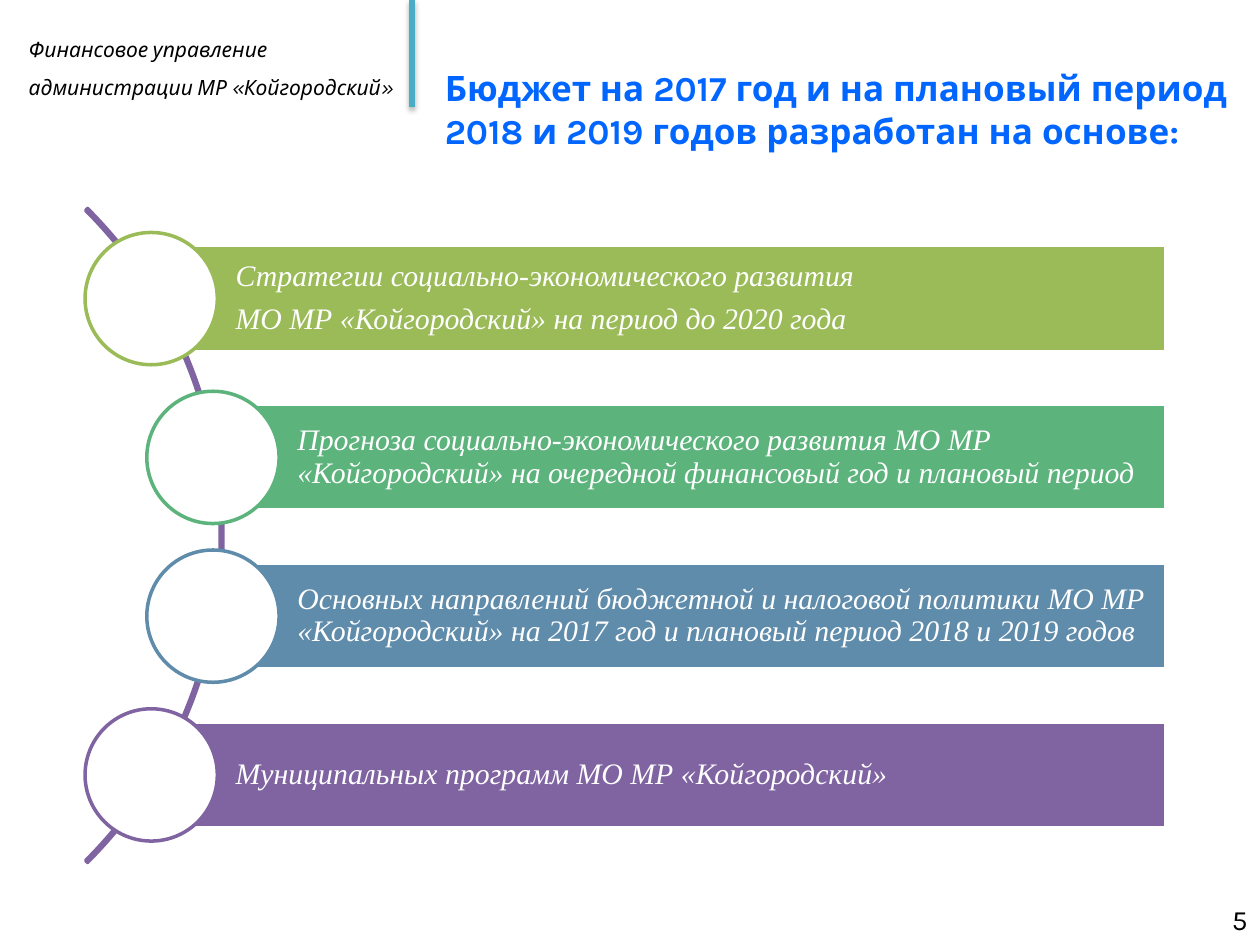
import pptx
import pptx.util
import pptx.dml.color
import pptx.enum.shapes
import pptx.enum.text
import pptx.oxml

Inches, Pt = pptx.util.Inches, pptx.util.Pt
Kind = pptx.enum.shapes.MSO_SHAPE
Align = pptx.enum.text.PP_ALIGN
Anchor = pptx.enum.text.MSO_ANCHOR

HEAD = ["Финансовое управление", "администрации МР «Койгородский»"]
TITLE = ["Бюджет на 2017 год и на плановый период 2018 и 2019 годов разработан на основе:"]
PAGE = ["5"]
BASES = [
    ("9BBB59", 1.2, ["Стратегии социально-экономического развития",
                     "МО МР «Койгородский» на период до 2020 года"]),
    ("5CB37C", 1.69, ["Прогноза социально-экономического развития МО МР "
                      "«Койгородский» на очередной финансовый год и плановый период"]),
    ("608CAB", 1.69, ["Основных направлений бюджетной и налоговой политики МО МР "
                      "«Койгородский» на 2017 год и плановый период 2018 и 2019 годов"]),
    ("8064A2", 1.2, ["Муниципальных программ МО МР «Койгородский»"]),
]
RIGHT, FIRST, STEP = 9.25, 2.37, 1.26
BAR, DISC = 0.84, 1.05
SHADOW = (
    '<a:effectLst xmlns:a="http://schemas.openxmlformats.org/drawingml/2006/main">'
    '<a:outerShdw blurRad="40000" dist="23000" dir="5400000" rotWithShape="0">'
    '<a:srgbClr val="000000"><a:alpha val="35000"/></a:srgbClr>'
    '</a:outerShdw></a:effectLst>'
)


def paint(part, color):
    part.solid()
    part.fore_color.rgb = pptx.dml.color.RGBColor.from_string(color)


def write(shape, lines, size, color, face="Karla", bold=False, italic=False,
          align=Align.LEFT, anchor=Anchor.MIDDLE, space=None, after=None,
          inset=(0.1, 0.05, 0.1, 0.05)):
    frame = shape.text_frame
    frame.word_wrap = True
    frame.vertical_anchor = anchor
    (frame.margin_left, frame.margin_top,
     frame.margin_right, frame.margin_bottom) = map(Inches, inset)
    for i, line in enumerate(lines):
        para = frame.add_paragraph() if i else frame.paragraphs[0]
        para.alignment = align
        para.line_spacing = space
        para.space_after = after
        run = para.add_run()
        run.text = line
        font = run.font
        font.name, font.size, font.bold, font.italic = face, Pt(size), bold, italic
        paint(font.fill, color)


def draw(slide, kind, box, line, fill=None):
    shape = slide.shapes.add_shape(kind, *map(Inches, box))
    shape.shadow.inherit = False
    if fill:
        paint(shape.fill, fill)
    else:
        shape.fill.background()
    paint(shape.line.fill, line)
    shape.line.width = Pt(2)
    return shape


def text_box(slide, box):
    return slide.shapes.add_textbox(*map(Inches, box))


def main():
    deck = pptx.Presentation()
    deck.slide_width, deck.slide_height = Inches(10), Inches(7.5)
    slide = deck.slides.add_slide(deck.slide_layouts[5])

    head = text_box(slide, (0.13, 0.14, 3.14, 0.71))
    write(head, HEAD, 12, "000000", italic=True, space=1.5, anchor=Anchor.TOP)
    rule = slide.shapes.add_connector(
        pptx.enum.shapes.MSO_CONNECTOR.STRAIGHT,
        Inches(3.27), Inches(0), Inches(3.27), Inches(0.85))
    paint(rule.line.fill, "4BACC6")
    rule.line.width = Pt(3)
    rule._element.spPr.append(pptx.oxml.parse_xml(SHADOW))

    title = slide.shapes.title
    title.left, title.top, title.width, title.height = map(
        Inches, (3.43, 0.29, 6.57, 1.15))
    write(title, TITLE, 20, "0066FF", bold=True)
    page = text_box(slide, (7.67, 7.1, 2.33, 0.4))
    write(page, PAGE, 16, "000000", align=Align.RIGHT)

    arc = draw(slide, Kind.BLOCK_ARC, (-5.57, 0.58, 7.34, 7.34), "8064A2")
    for i, value in enumerate((189, 27, 0.003)):
        arc.adjustments[i] = value

    for i, (color, left, lines) in enumerate(BASES):
        mid = FIRST + i * STEP
        bar = draw(slide, Kind.RECTANGLE,
                   (left, mid - BAR / 2, RIGHT - left, BAR), "FFFFFF", color)
        write(bar, lines, 17, "FFFFFF", face="Times New Roman", italic=True,
              space=0.9, after=Pt(6), inset=(0.67, 0.05, 0.05, 0.05))
        draw(slide, Kind.OVAL,
             (left - DISC / 2, mid - DISC / 2, DISC, DISC), color, "FFFFFF")

    deck.save("out.pptx")


if __name__ == "__main__":
    main()
